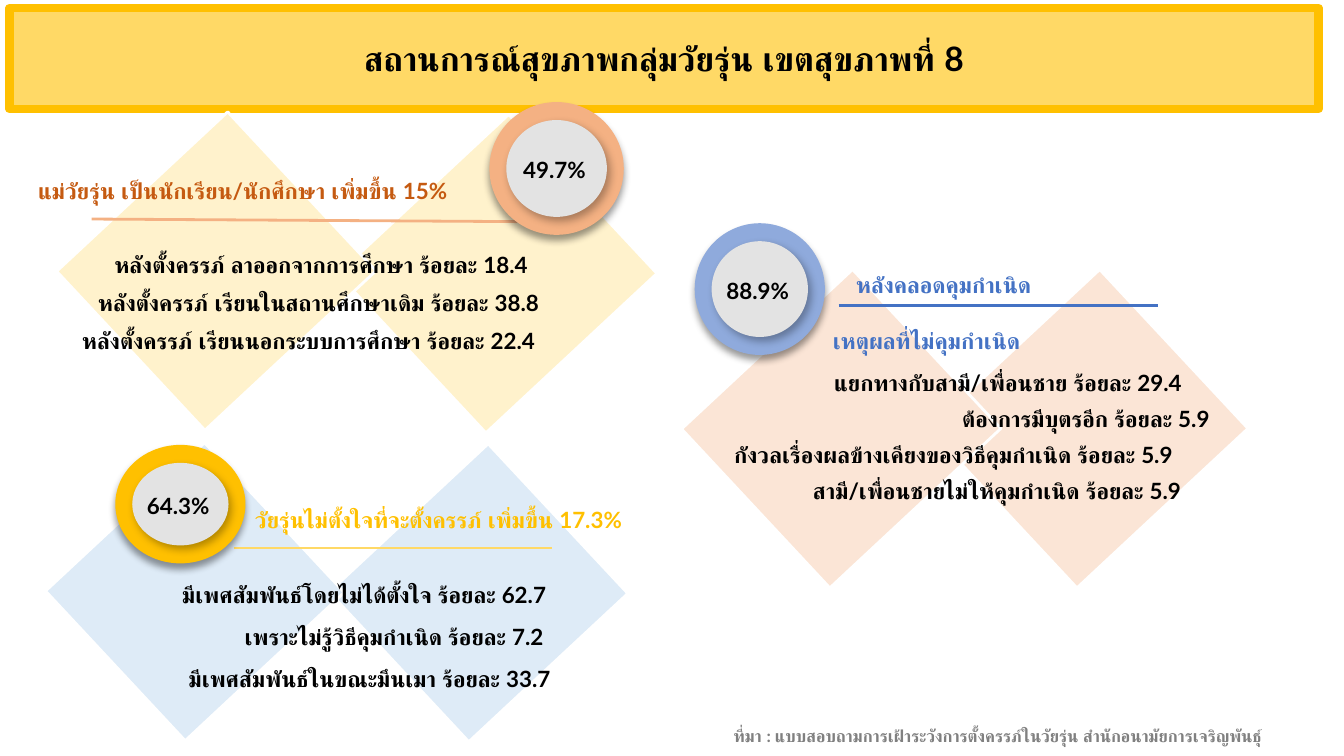
from dataclasses import dataclass

from lxml import etree
from pptx import Presentation
from pptx.dml.color import RGBColor
from pptx.enum.shapes import MSO_CONNECTOR, MSO_SHAPE
from pptx.enum.text import MSO_ANCHOR, MSO_AUTO_SIZE, PP_ALIGN
from pptx.oxml.ns import qn
from pptx.util import Cm, Pt

RECT, OVAL = MSO_SHAPE.RECTANGLE, MSO_SHAPE.OVAL
LINE = MSO_CONNECTOR.STRAIGHT
LEFT, CENTER = PP_ALIGN.LEFT, PP_ALIGN.CENTER
TOP, MIDDLE = MSO_ANCHOR.TOP, MSO_ANCHOR.MIDDLE
FIXED = MSO_AUTO_SIZE.NONE


@dataclass(frozen=True)
class Theme:
    """Colours and type sizes of the slide."""
    font: str = "Lato"
    ink: str = "000000"
    paper: str = "FFFFFF"
    core: str = "E3E3E3"
    note: str = "808080"
    gold: str = "FFC000"
    sand: str = "FFD966"
    cream: str = "FFF2CC"
    rust: str = "C55A11"
    peach: str = "F4B183"
    blush: str = "FBE5D6"
    blue: str = "4472C4"
    sky: str = "8FAADC"
    ice: str = "DEEBF7"
    head: float = 18
    text: float = 12
    small: float = 9


@dataclass(frozen=True)
class Topic:
    """Content and layout of one panel, in cm from its corner."""
    tile: str
    ring: str
    bar: str
    tint: str
    size: tuple
    tiles: tuple
    disc: tuple
    rule: tuple
    share: str
    heads: tuple
    start: tuple
    pitch: float
    facts: tuple


T = Theme()
TOPICS = (
    ((0.3, 1.9, 12.2, 6.5), Topic(
        T.cream, T.peach, T.peach, T.rust, (4.42, 4.11),
        ((6.89, 1.22), (1.58, 1.17)), (8.95, 0.03, 2.54, 2.51),
        (1.43, 2.24, 9.48, 2.29), "49.7%",
        (("แม่วัยรุ่น เป็นนักเรียน/นักศึกษา เพิ่มขึ้น 15%", 0.17, 1.33),),
        (1.0, 2.5), 20.4,
        (("หลังตั้งครรภ์ ลาออกจากการศึกษา ร้อยละ 18.4", 0.61),
         ("หลังตั้งครรภ์ เรียนในสถานศึกษาเดิม ร้อยละ 38.8", 0.3),
         ("หลังตั้งครรภ์ เรียนนอกระบบการศึกษา ร้อยละ 22.4", 0)))),
    ((0.9, 8.4, 12, 5.8), Topic(
        T.ice, T.gold, T.sand, T.gold, (4.11, 3.87),
        ((6.09, 0.87), (0.73, 0.85)), (1.28, 0.01, 2.46, 2.24),
        (3.52, 1.96, 9.54, 1.96), "64.3%",
        (("วัยรุ่นไม่ตั้งใจที่จะตั้งครรภ์ เพิ่มขึ้น 17.3%", 3.67, 1.05),),
        (2.29, 2.17), 22.5,
        (("มีเพศสัมพันธ์โดยไม่ได้ตั้งใจ ร้อยละ 62.7", 0),
         ("เพราะไม่รู้วิธีคุมกำเนิด ร้อยละ 7.2", 1.18),
         ("มีเพศสัมพันธ์ในขณะมึนเมา ร้อยละ 33.7", 0.12)))),
    ((13, 4.2, 12, 7), Topic(
        T.blush, T.sky, T.blue, T.blue, (4.42, 4.11),
        ((5.36, 1.85), (0.69, 1.85)), (0.13, 0.02, 2.46, 2.49),
        (2.85, 1.57, 8.89, 1.57), "88.9%",
        (("หลังคลอดคุมกำเนิด", 2.93, 0.8),
         ("เหตุผลที่ไม่คุมกำเนิด", 2.49, 1.85)),
        (0.62, 2.48), 19.3,
        (("แยกทางกับสามี/เพื่อนชาย ร้อยละ 29.4", 1.89),
         ("ต้องการมีบุตรอีก ร้อยละ 5.9", 4.31),
         ("กังวลเรื่องผลข้างเคียงของวิธีคุมกำเนิด ร้อยละ 5.9", 0),
         ("สามี/เพื่อนชายไม่ให้คุมกำเนิด ร้อยละ 5.9", 1.49)))),
)


def rgb(code):
    """Turn a hex code into a colour."""
    return RGBColor.from_string(code)


def style(para, size, color, align=LEFT):
    """Format one paragraph."""
    para.alignment = align
    font = para.font
    font.name, font.size, font.bold = T.font, Pt(size), True
    font.color.rgb = rgb(color)


def place(item, box):
    """Move an item to a box in cm and bring it to the front."""
    item.left, item.top, item.width, item.height = map(Cm, box)
    item.element.getparent().append(item.element)


def shade(shape, alpha, blur, dist, angle):
    """Give a shape an outer shadow."""
    shape.shadow.inherit = False
    effects = shape.element.spPr.find(qn("a:effectLst"))
    outer = etree.SubElement(effects, qn("a:outerShdw"), blurRad=str(Pt(blur)),
                             dist=str(Pt(dist)), dir=str(angle * 60000),
                             algn="ctr", rotWithShape="0")
    color = etree.SubElement(outer, qn("a:srgbClr"), val=T.ink)
    etree.SubElement(color, qn("a:alpha"), val=str(alpha * 1000))


def label(shapes, box, text, color, align=LEFT, wrap=False):
    """Add one line of text."""
    frame = shapes.add_textbox(*map(Cm, box)).text_frame
    frame.word_wrap = wrap
    frame.text = text
    style(frame.paragraphs[0], T.text, color, align)


def disc(shapes, box, color):
    """Add a filled circle without an outline."""
    shape = shapes.add_shape(OVAL, *map(Cm, box))
    shape.fill.solid()
    shape.fill.fore_color.rgb = rgb(color)
    shape.line.fill.background()
    return shape


def badge(slide, box, color, share):
    """Draw a ring around a percentage."""
    x, y, w, h = box
    shapes = slide.shapes.add_group_shape().shapes
    shade(disc(shapes, box, color), 40, 4, 3, 90)
    core = (x + 0.32, y + 0.34, w - 0.64, h - 0.68)
    shade(disc(shapes, core, T.core), 30, 4.5, 2.6, 53)
    label(shapes, (x + 0.28, y + h / 2 - 0.35, w - 0.64, 0.76),
          share, T.ink, CENTER, True)


def tile(slide, box, color):
    """Draw one tilted square."""
    shape = slide.shapes.add_shape(RECT, *map(Cm, box))
    shape.rotation = 317
    shape.shadow.inherit = False
    shape.fill.solid()
    shape.fill.fore_color.rgb = rgb(color)
    shape.line.color.rgb = rgb(T.paper)
    shape.line.width = Pt(1.5)


def rule(slide, ends, color):
    """Draw the line under a heading."""
    line = slide.shapes.add_connector(LINE, *map(Cm, ends))
    line.line.color.rgb = rgb(color)
    line.line.width = Pt(1.5)
    etree.SubElement(line.element.spPr, qn("a:effectLst"))


def listing(body, box, rows, pitch, size, color):
    """Fill a body placeholder with indented rows."""
    place(body, box)
    frame = body.text_frame
    frame.word_wrap, frame.auto_size = True, FIXED
    frame.vertical_anchor = TOP
    frame.text = "\n".join(text for text, _ in rows)
    for para, (_, indent) in zip(frame.paragraphs, rows):
        props = para._p.get_or_add_pPr()
        props.set("marL", str(Cm(indent)))
        props.set("indent", "0")
        etree.SubElement(props, qn("a:buNone"))
        para.space_before = Pt(0)
        para.line_spacing = pitch
        style(para, size, color)


def panel(slide, box, topic, body):
    """Place one topic inside its box."""
    x, y, w, h = box
    for dx, dy in topic.tiles:
        tile(slide, (x + dx, y + dy, *topic.size), topic.tile)
    x1, y1, x2, y2 = topic.rule
    rule(slide, (x + x1, y + y1, x + x2, y + y2), topic.bar)
    dx, dy, *size = topic.disc
    badge(slide, (x + dx, y + dy, *size), topic.ring, topic.share)
    for text, dx, dy in topic.heads:
        label(slide.shapes, (x + dx, y + dy, w - dx, 0.76), text, topic.tint)
    dx, dy = topic.start
    listing(body, (x + dx, y + dy, w - dx, h - dy), topic.facts,
            Pt(topic.pitch), T.text, T.ink)


def banner(title, box):
    """Format the title as a rounded banner."""
    place(title, box)
    props = title.element.spPr
    shape = etree.SubElement(props, qn("a:prstGeom"), prst="roundRect")
    etree.SubElement(shape, qn("a:avLst"))
    title.fill.solid()
    title.fill.fore_color.rgb = rgb(T.sand)
    title.line.color.rgb = rgb(T.gold)
    title.line.width = Pt(4.5)
    frame = title.text_frame
    frame.auto_size, frame.vertical_anchor = FIXED, MIDDLE
    frame.text = "สถานการณ์สุขภาพกลุ่มวัยรุ่น เขตสุขภาพที่ 8"
    style(frame.paragraphs[0], T.head, T.ink, CENTER)


def main():
    """Build and save the slide."""
    deck = Presentation()
    deck.slide_width, deck.slide_height = Cm(25.4), Cm(14.29)
    slide = deck.slides.add_slide(deck.slide_layouts[4])
    title, *bodies, note = slide.placeholders
    banner(title, (0.18, 0.15, 24.74, 1.91))
    for (box, topic), body in zip(TOPICS, bodies):
        panel(slide, box, topic, body)
    source = "ที่มา : แบบสอบถามการเฝ้าระวังการตั้งครรภ์ในวัยรุ่น สำนักอนามัยการเจริญพันธุ์"
    listing(note, (13.61, 13.59, 11.86, 0.64), ((source, 0),), 1.0, T.small, T.note)
    deck.save("out.pptx")


if __name__ == "__main__":
    main()
